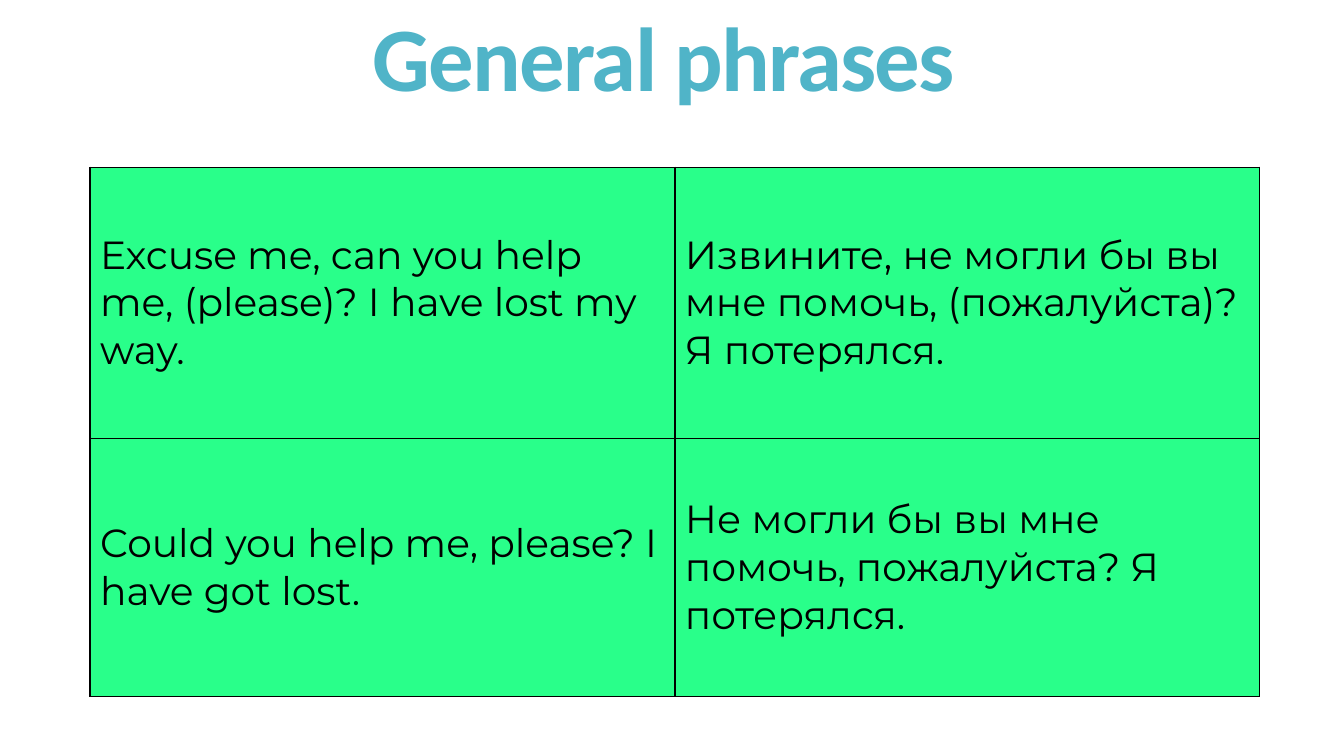
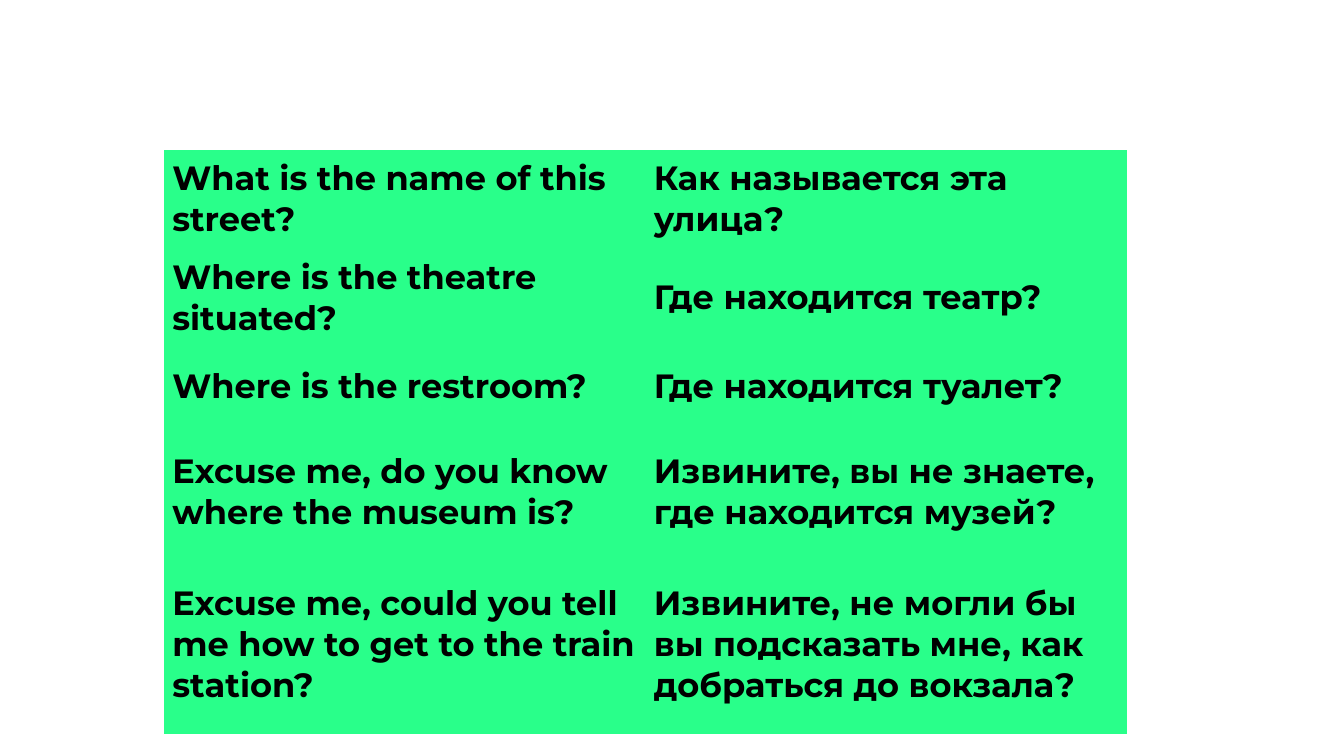
from dataclasses import dataclass

from lxml import etree
from pptx import Presentation
from pptx.dml.color import RGBColor
from pptx.enum.text import MSO_ANCHOR, PP_ALIGN
from pptx.oxml.ns import qn
from pptx.slide import Slide
from pptx.table import _Cell
from pptx.util import Pt

MIDDLE = MSO_ANCHOR.MIDDLE
CENTER = PP_ALIGN.CENTER
TITLE_ONLY, BLANK = 5, 6
PLAIN_STYLE = "{2D5ABB26-0587-4C30-8999-92F81FD0307C}"


@dataclass(frozen=True)
class Theme:
    title_font: str = "Calibri"
    body_font: str = "Montserrat"
    title_size: float = 64.8
    title_track: float = -1.2
    title_color: str = "50B4C8"
    ink: str = "000000"
    fill: str = "29FF8A"


@dataclass(frozen=True)
class Grid:
    left: float
    top: float
    width: float
    heights: tuple[float, ...]
    size: float
    bold: bool
    inset: float
    border: float
    rows: tuple[tuple[str, str], ...]


THEME = Theme()

HELP = Grid(
    left=64.3, top=119.4, width=835.6, heights=(193.7, 184.3),
    size=28, bold=False, inset=7.2, border=1,
    rows=(
        ("Excuse me, can you help me, (please)? I have lost my way.",
         "Извините, не могли бы вы мне помочь, (пожалуйста)? Я потерялся."),
        ("Could you help me, please? I have got lost.",
         "Не могли бы вы мне помочь, пожалуйста? Я потерялся."),
    ),
)

PLACES = Grid(
    left=117.3, top=107.2, width=688, heights=(57.6, 57.6, 57.6, 92.2, 126.7),
    size=24, bold=True, inset=5.8, border=0,
    rows=(
        ("What is the name of this street?", "Как называется эта улица?"),
        ("Where is the theatre situated?", "Где находится театр?"),
        ("Where is the restroom?", "Где находится туалет?"),
        ("Excuse me, do you know where the museum is?",
         "Извините, вы не знаете, где находится музей?"),
        ("Excuse me, could you tell me how to get to the train station?",
         "Извините, не могли бы вы подсказать мне, как добраться до вокзала?"),
    ),
)


def set_title(slide: Slide, text: str) -> None:
    title = slide.shapes.title
    title.left, title.top = Pt(50), Pt(12.2)
    title.width, title.height = Pt(848), Pt(66.2)
    frame = title.text_frame
    frame.text = text
    frame.vertical_anchor = MIDDLE
    para = frame.paragraphs[0]
    para.alignment = CENTER
    para.line_spacing = 0.85
    run = para.runs[0]
    font = run.font
    font.name, font.size, font.bold = THEME.title_font, Pt(THEME.title_size), True
    font.color.rgb = RGBColor.from_string(THEME.title_color)
    run._r.get_or_add_rPr().set("spc", str(round(THEME.title_track * 100)))


def add_border(cell: _Cell, width: float) -> None:
    props = cell._tc.get_or_add_tcPr()
    for spot, side in enumerate(("lnL", "lnR", "lnT", "lnB")):
        line = etree.Element(qn(f"a:{side}"), w=str(Pt(width)))
        paint = etree.SubElement(line, qn("a:solidFill"))
        etree.SubElement(paint, qn("a:srgbClr"), val=THEME.ink)
        props.insert(spot, line)


def fill_cell(cell: _Cell, text: str, grid: Grid) -> None:
    cell.text_frame.text = text
    cell.vertical_anchor = MIDDLE
    cell.margin_left = cell.margin_right = Pt(grid.inset)
    cell.margin_top = cell.margin_bottom = Pt(grid.inset)
    cell.fill.solid()
    cell.fill.fore_color.rgb = RGBColor.from_string(THEME.fill)
    font = cell.text_frame.paragraphs[0].runs[0].font
    font.name, font.size, font.bold = THEME.body_font, Pt(grid.size), grid.bold
    font.color.rgb = RGBColor.from_string(THEME.ink)
    if grid.border:
        add_border(cell, grid.border)


def add_grid(slide: Slide, grid: Grid) -> None:
    count = len(grid.rows[0])
    frame = slide.shapes.add_table(
        len(grid.rows), count, Pt(grid.left), Pt(grid.top),
        Pt(grid.width), Pt(sum(grid.heights)))
    table = frame.table
    table.first_row = table.horz_banding = False
    table._tbl.tblPr.find(qn("a:tableStyleId")).text = PLAIN_STYLE
    for col in table.columns:
        col.width = Pt(grid.width / count)
    for row, height, texts in zip(table.rows, grid.heights, grid.rows):
        row.height = Pt(height)
        for cell, text in zip(row.cells, texts):
            fill_cell(cell, text, grid)


def main() -> None:
    deck = Presentation()
    deck.slide_width, deck.slide_height = Pt(960), Pt(540)

    slide = deck.slides.add_slide(deck.slide_layouts[TITLE_ONLY])
    set_title(slide, "General phrases")
    add_grid(slide, HELP)

    slide = deck.slides.add_slide(deck.slide_layouts[BLANK])
    add_grid(slide, PLACES)

    deck.save("out.pptx")


if __name__ == "__main__":
    main()
